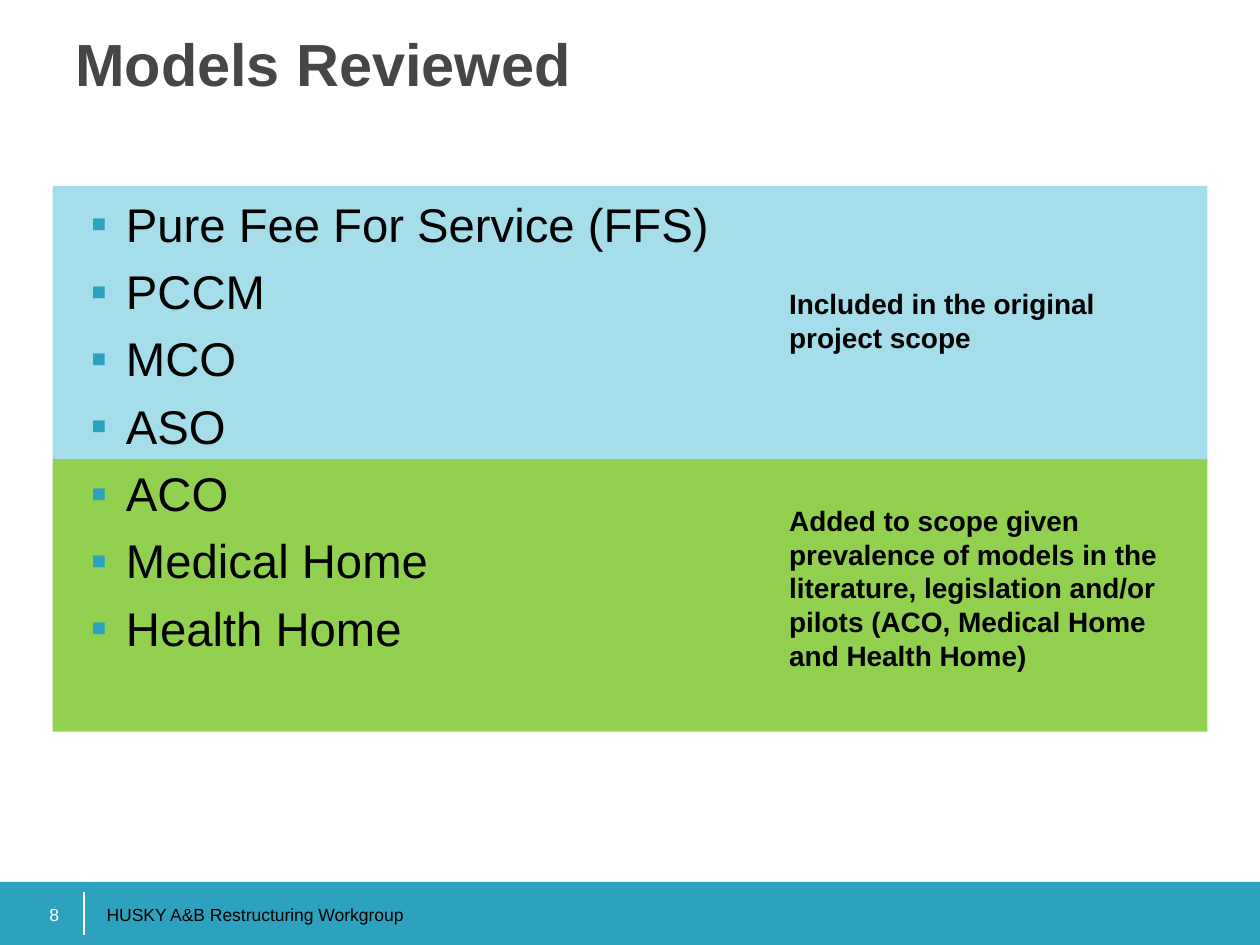
from dataclasses import dataclass

from lxml import etree
from pptx import Presentation
from pptx.dml.color import RGBColor
from pptx.enum.shapes import MSO_CONNECTOR, MSO_SHAPE
from pptx.enum.text import MSO_ANCHOR, PP_ALIGN
from pptx.oxml.ns import qn
from pptx.util import Cm, Pt

RECTANGLE = MSO_SHAPE.RECTANGLE
STRAIGHT = MSO_CONNECTOR.STRAIGHT
TOP, BOTTOM = MSO_ANCHOR.TOP, MSO_ANCHOR.BOTTOM
LEFT, RIGHT = PP_ALIGN.LEFT, PP_ALIGN.RIGHT


@dataclass(frozen=True)
class Theme:
    """Colours, font and type sizes of the slide."""
    font: str = "Arial"
    accent: str = "2DA2BF"
    original_scope: str = "A6DDEA"
    added_scope: str = "92D050"
    heading: str = "464646"
    text: str = "000000"
    white: str = "FFFFFF"
    title_size: int = 34
    body_size: int = 27
    note_size: int = 16
    footer_size: int = 10


THEME = Theme()
MODELS = ["Pure Fee For Service (FFS)", "PCCM", "MCO", "ASO", "ACO",
          "Medical Home", "Health Home"]


def add_band(slide, left, top, width, height, color):
    """Add a plain filled rectangle."""
    shape = slide.shapes.add_shape(RECTANGLE, Cm(left), Cm(top), Cm(width), Cm(height))
    shape.shadow.inherit = False
    shape.fill.solid()
    shape.fill.fore_color.rgb = RGBColor.from_string(color)
    shape.line.fill.background()


def add_divider(slide, x, top, bottom):
    """Add the thin vertical rule of the footer."""
    connector = slide.shapes.add_connector(STRAIGHT, Cm(x), Cm(top), Cm(x), Cm(bottom))
    connector.line.color.rgb = RGBColor.from_string(THEME.white)
    connector.line.width = Pt(1)
    etree.SubElement(connector._element.spPr, qn("a:effectLst"))


def add_bullet(paragraph):
    """Give a paragraph a hanging square bullet."""
    properties = paragraph._p.get_or_add_pPr()
    properties.set("marL", str(Cm(1.02)))
    properties.set("indent", str(Cm(-0.71)))
    color = etree.SubElement(properties, qn("a:buClr"))
    etree.SubElement(color, qn("a:srgbClr"), val=THEME.accent)
    etree.SubElement(properties, qn("a:buFont"), typeface=THEME.font)
    etree.SubElement(properties, qn("a:buChar"), char="▪")


def add_text(slide, left, top, width, height, lines, size, color=THEME.text,
             bold=False, anchor=TOP, align=LEFT, bulleted=False):
    """Add a wrapped text box with one paragraph for each line."""
    shape = slide.shapes.add_textbox(Cm(left), Cm(top), Cm(width), Cm(height))
    frame = shape.text_frame
    frame.word_wrap = True
    frame.vertical_anchor = anchor
    for index, line in enumerate(lines):
        paragraph = frame.add_paragraph() if index else frame.paragraphs[0]
        paragraph.alignment = align
        if bulleted:
            add_bullet(paragraph)
        if index:
            paragraph.space_before = Pt(6)
        run = paragraph.add_run()
        run.text = line
        run.font.name = THEME.font
        run.font.size = Pt(size)
        run.font.bold = bold
        run.font.color.rgb = RGBColor.from_string(color)


def add_footer(slide):
    """Add the footer bar with page number and workgroup name."""
    add_band(slide, 0, 17.78, 25.4, 1.27, THEME.accent)
    add_divider(slide, 1.69, 17.99, 18.84)
    add_text(slide, 1.9, 17.75, 11.43, 1.02, ["HUSKY A&B Restructuring Workgroup"],
             THEME.footer_size, anchor=BOTTOM)
    add_text(slide, 0.42, 17.75, 1.02, 1.02, ["8"], THEME.footer_size,
             THEME.white, anchor=BOTTOM, align=RIGHT)


def main():
    """Build and save the slide."""
    presentation = Presentation()
    presentation.slide_width, presentation.slide_height = Cm(25.4), Cm(19.05)
    slide = presentation.slides.add_slide(presentation.slide_layouts[6])
    add_footer(slide)
    add_band(slide, 1.06, 9.25, 23.28, 5.5, THEME.added_scope)
    add_band(slide, 1.06, 3.75, 23.28, 5.5, THEME.original_scope)
    add_text(slide, 1.27, 3.81, 22.86, 12.57, MODELS, THEME.body_size, bulleted=True)
    add_text(slide, 1.27, 0.43, 22.86, 3.18, ["Models Reviewed"],
             THEME.title_size, THEME.heading, bold=True)
    add_text(slide, 15.66, 10.03, 8.26, 3.68,
             ["Added to scope given prevalence of models in the literature, "
              "legislation and/or pilots (ACO, Medical Home and Health Home)"],
             THEME.note_size, bold=True)
    add_text(slide, 15.66, 5.66, 7.2, 1.63, ["Included in the original project scope"],
             THEME.note_size, bold=True)
    presentation.save("out.pptx")


if __name__ == "__main__":
    main()
